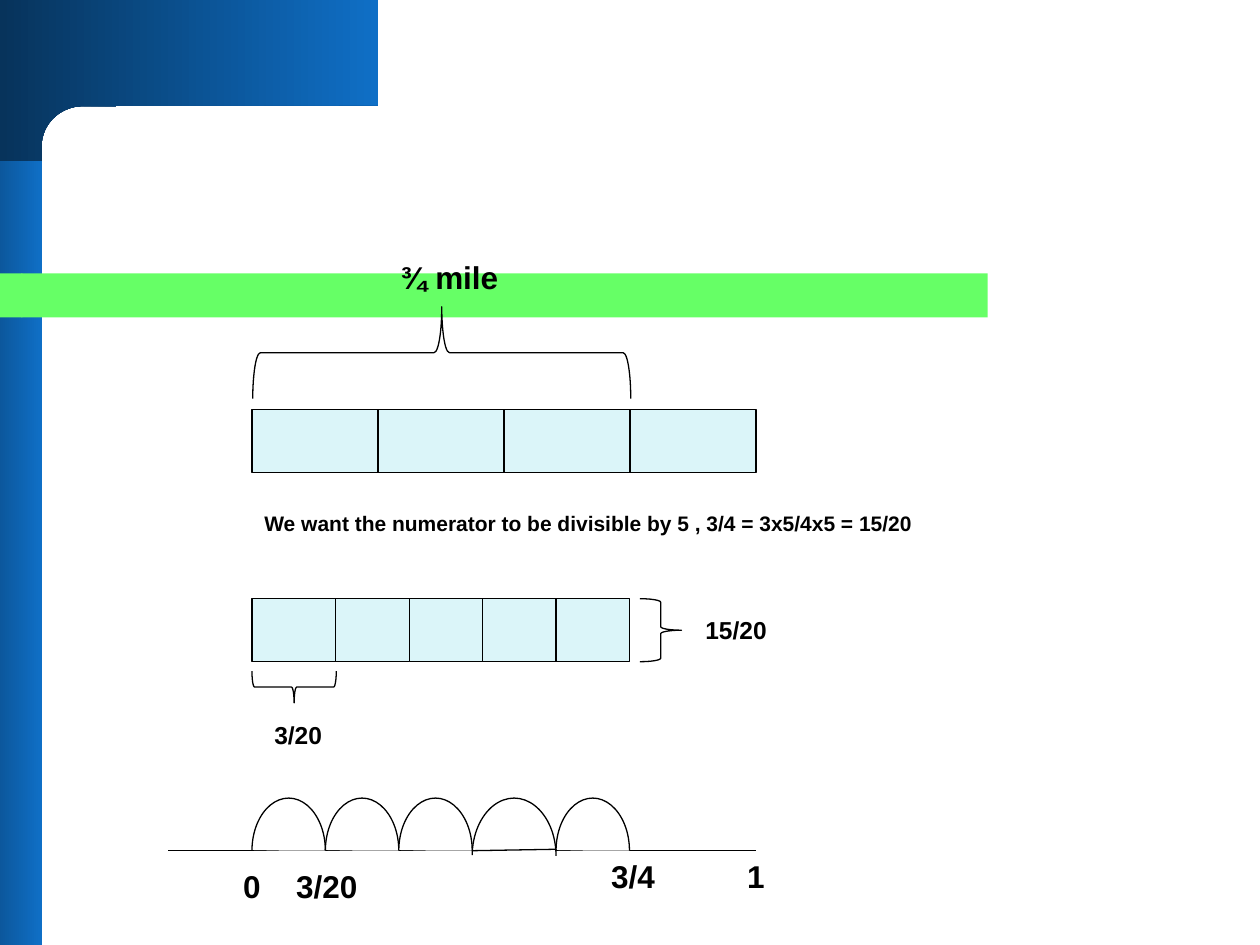
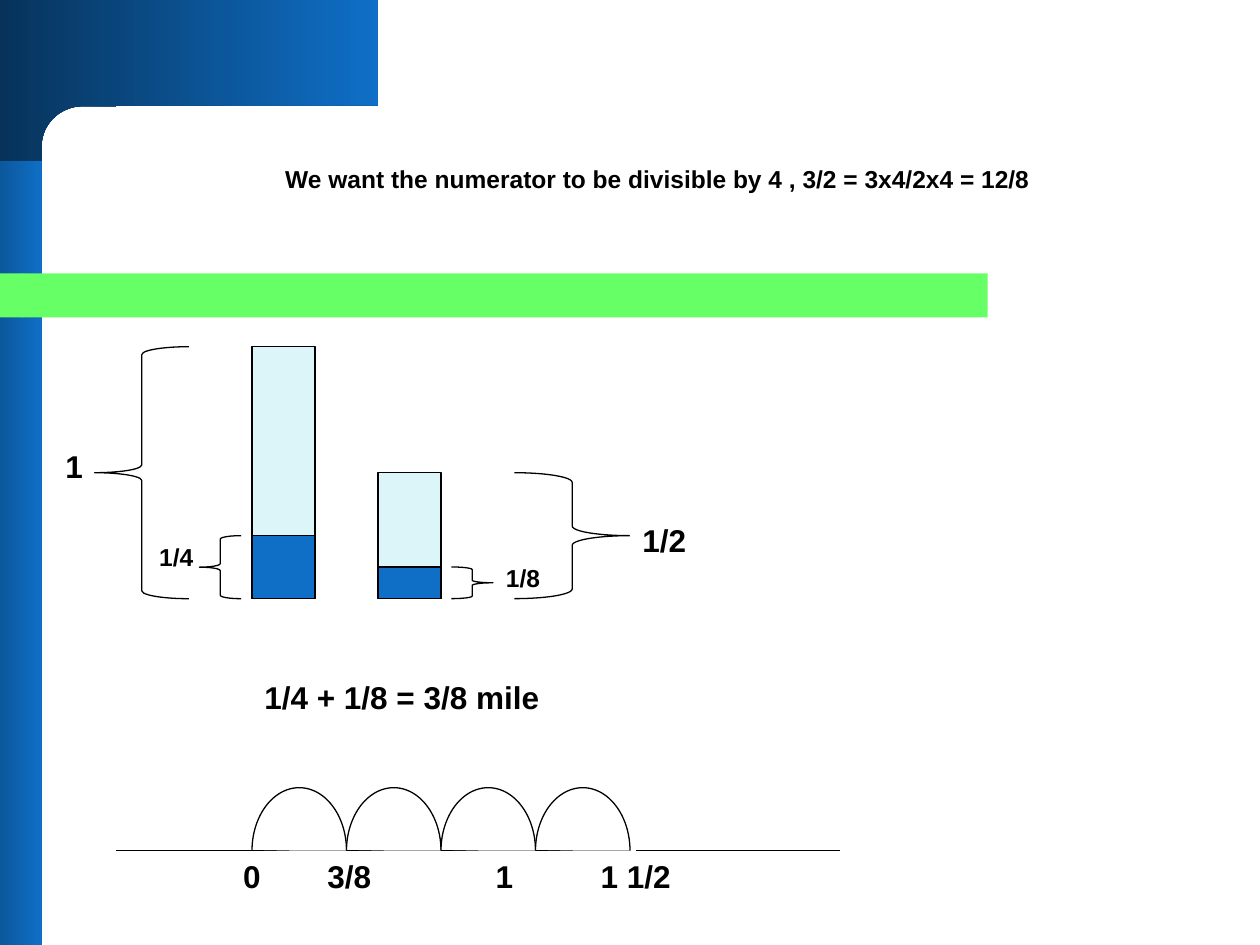
from dataclasses import dataclass, field
from itertools import accumulate
from math import cos, radians, sin

from lxml.etree import SubElement
from pptx import Presentation
from pptx.dml.color import RGBColor as RGB
from pptx.enum.shapes import MSO_CONNECTOR as LINK, MSO_SHAPE as KIND
from pptx.enum.text import MSO_AUTO_SIZE as FIT, MSO_ANCHOR as ANCHOR
from pptx.oxml.ns import qn
from pptx.util import Cm, Pt


@dataclass(frozen=True)
class Theme:
    ink: RGB = RGB(0x00, 0x00, 0x00)
    paper: RGB = RGB(0xFF, 0xFF, 0xFF)
    pale: RGB = RGB(0xDB, 0xF5, 0xF9)
    blue: RGB = RGB(0x0F, 0x6F, 0xC6)
    navy: RGB = RGB(0x07, 0x33, 0x5B)
    green: RGB = RGB(0x66, 0xFF, 0x66)
    hairline: Pt = Pt(0.75)
    large: int = 18
    medium: int = 14
    small: int = 12
    font: dict = field(default_factory=lambda: {"name": "Arial", "bold": True})
    frame: dict = field(default_factory=lambda: {
        "auto_size": FIT.SHAPE_TO_FIT_TEXT, "vertical_anchor": ANCHOR.TOP})


theme = Theme()


def draw(slide, kind, box, fill, outlined=True, rotation=0):
    shape = slide.shapes.add_shape(kind, *map(Cm, box))
    shape.shadow.inherit = False
    shape.rotation = rotation
    shape.fill.solid()
    shape.fill.fore_color.rgb = fill
    if outlined:
        shape.line.color.rgb = theme.ink
        shape.line.width = theme.hairline
    else:
        shape.line.fill.background()
    return shape


def rule(slide, x1, y1, x2, y2):
    line = slide.shapes.add_connector(LINK.STRAIGHT, *map(Cm, (x1, y1, x2, y2)))
    line.line.color.rgb = theme.ink
    line.line.width = theme.hairline
    SubElement(line.element.spPr, qn("a:effectLst"))
    return line


deck = Presentation()
deck.slide_width, deck.slide_height = Cm(25.4), Cm(19.05)
blank = deck.slide_layouts[6]
numerator5, numerator4 = (deck.slides.add_slide(blank) for _ in range(2))

# Shared bands: built once, then moved to the master
side_band = draw(numerator5, KIND.RECTANGLE, (-1.27, 0, 2.12, 19.05), theme.navy, False)

inner_curve = [(1.68 + 0.84 * cos(radians(a)), 2.95 + 0.81 * sin(radians(a)))
               for a in range(270, 179, -6)]
outline = [(7.62, 2.12), *inner_curve, (0.84, 3.25), (0, 3.25), (0, 0)]
builder = numerator5.shapes.build_freeform(Cm(7.62), 0)
builder.add_line_segments([(Cm(x), Cm(y)) for x, y in outline])
corner = builder.convert_to_shape()
corner.shadow.inherit = False
corner.line.fill.background()

for band in (side_band, corner):
    band.fill.gradient()
    band.fill.gradient_angle = 0
    for stop, colour in zip(band.fill.gradient_stops, (theme.navy, theme.blue)):
        stop.color.rgb = colour

title_bar = draw(numerator5, KIND.RECTANGLE, (0.43, 5.51, 19.48, 0.89), theme.green, False)
bar_cap = draw(numerator5, KIND.FLOWCHART_DELAY, (-0.64, 5.51, 1.09, 0.89),
               theme.green, False, 180)

for number, band in enumerate((side_band, corner, title_bar, bar_cap), 20):
    band.element.nvSpPr.cNvPr.id = number
    deck.slide_master.shapes.element.append(band.element)

origin, axis = 5.08, 17.15
sweep = 108.66  # arc start, just past 180 degrees

# Slide 1: one mile in quarters
mile = draw(numerator5, KIND.RECTANGLE, (origin, 8.26, 10.16, 1.27), theme.pale)
for quarter in (1, 2, 3):
    x = origin + 2.54 * quarter
    divider = rule(numerator5, x, 8.26, x, 9.53)
    if quarter == 2:
        divider.begin_connect(mile, 0)
        divider.end_connect(mile, 2)

# Slide 1: three quarters cut into five parts
parts = [1.69, 1.48, 1.48, 1.48, 1.48]
for x, width in zip(accumulate(parts, initial=origin), parts):
    draw(numerator5, KIND.RECTANGLE, (x, 12.07, width, 1.27), theme.pale)

# Slide 1: braces
for kind, box, rotation in [
    (KIND.LEFT_BRACE, (7.98, 3.3, 1.85, 7.62), 90),
    (KIND.RIGHT_BRACE, (12.9, 12.07, 0.84, 1.27), 0),
    (KIND.LEFT_BRACE, (5.61, 13, 0.64, 1.7), 270),
]:
    draw(numerator5, kind, box, theme.paper, rotation=rotation)

# Slide 2: whole and half bars with their shaded quarters
for x, y, height, fill in [
    (origin, 6.99, 5.08, theme.pale), (7.62, 9.53, 2.54, theme.pale),
    (origin, 10.8, 1.27, theme.blue), (7.62, 11.43, 0.64, theme.blue),
]:
    draw(numerator4, KIND.RECTANGLE, (x, y, 1.27, height), fill)

# Slide 2: braces
for kind, box in [
    (KIND.LEFT_BRACE, (1.91, 6.99, 1.9, 5.08)),
    (KIND.RIGHT_BRACE, (10.37, 9.53, 2.33, 2.54)),
    (KIND.LEFT_BRACE, (4.02, 10.8, 0.84, 1.27)),
    (KIND.RIGHT_BRACE, (9.1, 11.43, 0.84, 0.64)),
]:
    draw(numerator4, kind, box, theme.paper)

# Number lines with their hops; the last rules lie over the arcs
for slide, start, end, hops, top, heights, overlays in [
    (numerator5, 3.39, 15.24, [1.48, 1.48, 1.48, 1.69, 1.48], 16.09,
     [2.12, 2.12, 2.12, 2.33, 2.12], [(9.52, axis, 11.22, 17.12)]),
    (numerator4, origin, 12.7, [1.905] * 4, 15.88, [2.54] * 4,
     [(12.83, axis, 16.94, axis), (2.34, axis, 5.18, axis)]),
]:
    rule(slide, start, axis, end, axis)
    for x, width, height in zip(accumulate(hops, initial=origin), hops, heights):
        hop = draw(slide, KIND.ARC, (x, top, width, height), theme.paper)
        hop.adjustments[0], hop.adjustments[1] = sweep, 0
    for ends in overlays:
        rule(slide, *ends)

# Labels: text, left, top, width, size, wrapped
labels = [
    (numerator5, [
        ("¾ mile", 7.82, 5.08, 2.51, theme.large, False),
        ("We want the numerator to be divisible by 5 , 3/4 = 3x5/4x5 = 15/20",
         5.08, 10.16, 14.17, theme.small, True),
        ("15/20", 13.97, 12.27, 1.75, theme.medium, False),
        ("3/20", 5.28, 14.4, 1.47, theme.medium, False),
        ("0", 4.65, 17.35, 0.86, theme.large, False),
        ("3/20", 5.72, 17.35, 1.75, theme.large, False),
        ("3/4", 12.07, 17.15, 1.4, theme.large, False),
        ("1", 14.81, 17.15, 0.86, theme.large, False),
    ]),
    (numerator4, [
        ("We want the numerator to be divisible by 4 , 3/2 = 3x4/2x4 = 12/8",
         5.5, 3.18, 16, theme.medium, False),
        ("1", 1.07, 8.89, 0.86, theme.large, False),
        ("1/2", 12.7, 10.37, 1.4, theme.large, False),
        ("1/4", 2.96, 10.8, 1.27, theme.medium, True),
        ("1/8", 9.95, 11.22, 1.19, theme.medium, False),
        ("1/4 + 1/8 = 3/8 mile", 5.08, 13.55, 6.27, theme.large, False),
        ("0", 4.65, 17.15, 0.86, theme.large, False),
        ("3/8", 6.35, 17.15, 1.4, theme.large, False),
        ("1", 9.74, 17.15, 0.86, theme.large, False),
        ("1 1/2", 11.86, 17.15, 1.93, theme.large, False),
    ]),
]
for slide, entries in labels:
    for text, x, y, width, size, wrapped in entries:
        label = slide.shapes.add_textbox(
            Cm(x), Cm(y), Cm(width), Cm(0.04 * size + 0.28))
        if text == "1/2":
            label.fill.solid()
            label.fill.fore_color.rgb = theme.paper
        frame = label.text_frame
        for name, value in (theme.frame | {"word_wrap": wrapped}).items():
            setattr(frame, name, value)
        run = frame.paragraphs[0].add_run()
        run.text = text
        for name, value in (theme.font | {"size": Pt(size)}).items():
            setattr(run.font, name, value)
        run.font.color.rgb = theme.ink

deck.save("out.pptx")
